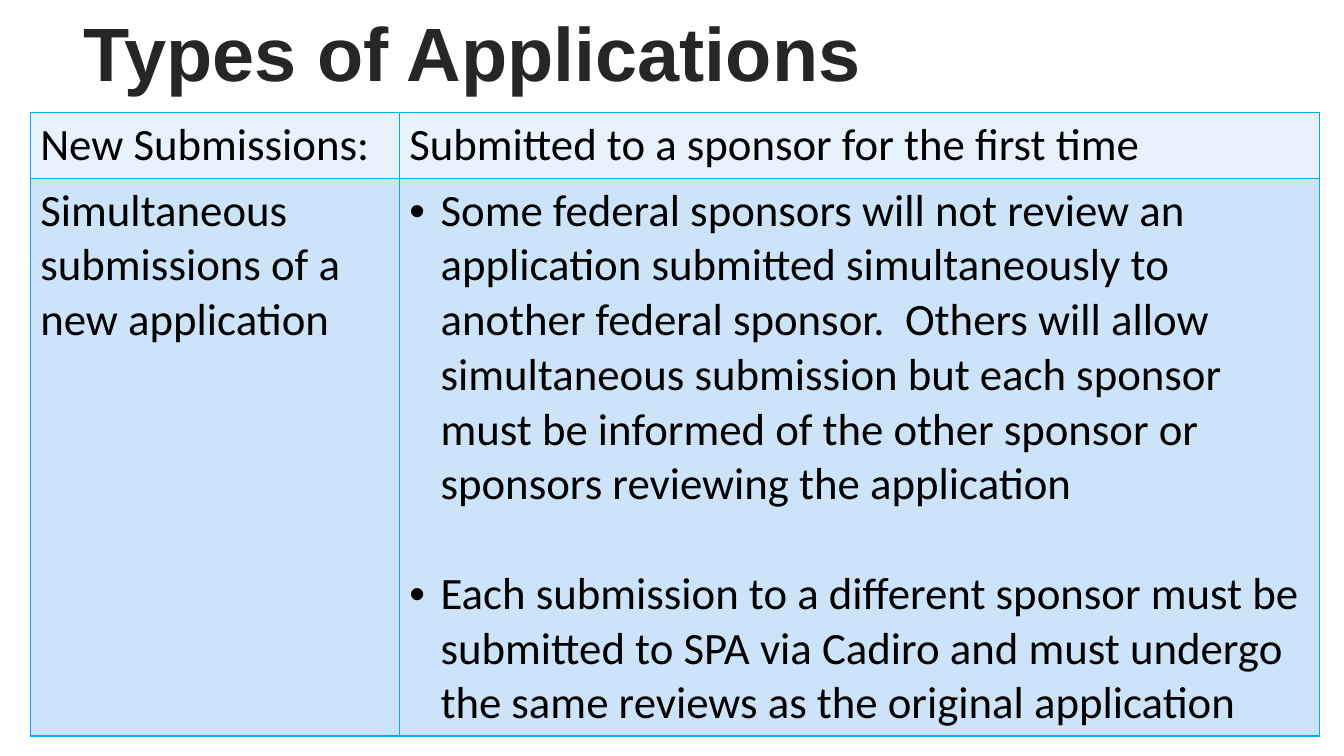
from lxml import etree
from pptx import Presentation
from pptx.dml.color import RGBColor
from pptx.enum.text import MSO_ANCHOR, MSO_AUTO_SIZE, PP_ALIGN
from pptx.oxml.ns import qn
from pptx.util import Inches, Pt

LEFT = PP_ALIGN.LEFT
TOP, MIDDLE = MSO_ANCHOR.TOP, MSO_ANCHOR.MIDDLE
NO_AUTOFIT = MSO_AUTO_SIZE.NONE
TITLE_ONLY = 5
COLORS = {"title": "262626", "body": "000000", "border": "00AEEF",
          "new": "E7F2FC", "simultaneous": "CCE3F9"}
COLUMNS = [3.66, 9.13]
ROWS = [0.65, 5.53]
BODY_SIZE = 32
LINE_HEIGHT = 39
BULLET_INDENT = Inches(0.31)


def write(frame, paragraphs, size=BODY_SIZE, font="Calibri", color="body",
          bold=False, bullets=False, gap=0):
    """Fill a text frame; gap is the space in points between paragraphs."""
    for i, text in enumerate(paragraphs):
        paragraph = frame.paragraphs[0] if i == 0 else frame.add_paragraph()
        paragraph.alignment = LEFT
        paragraph.line_spacing = 1.0
        paragraph.space_before = Pt(gap if i else 0)
        run = paragraph.add_run()
        run.text = text
        run.font.size = Pt(size)
        run.font.name = font
        run.font.bold = bold
        run.font.color.rgb = RGBColor.from_string(COLORS[color])
        if bullets:
            properties = paragraph._p.get_or_add_pPr()
            properties.set("marL", str(BULLET_INDENT))
            properties.set("indent", str(-BULLET_INDENT))
            etree.SubElement(properties, qn("a:buFont"), typeface="Arial")
            etree.SubElement(properties, qn("a:buChar"), char="•")


def add_borders(cell):
    properties = cell._tc.get_or_add_tcPr()
    for side in ("lnL", "lnR", "lnT", "lnB"):
        line = etree.SubElement(properties, qn(f"a:{side}"), w=str(Pt(1)))
        fill = etree.SubElement(line, qn("a:solidFill"))
        etree.SubElement(fill, qn("a:srgbClr"), val=COLORS["border"])


application_types = [
    ("new", "New Submissions:", ["Submitted to a sponsor for the first time"]),
    ("simultaneous", "Simultaneous submissions of a new application", [
        "Some federal sponsors will not review an application submitted "
        "simultaneously to another federal sponsor.  Others will allow "
        "simultaneous submission but each sponsor must be informed of the "
        "other sponsor or sponsors reviewing the application",
        "Each submission to a different sponsor must be submitted to SPA via "
        "Cadiro and must undergo the same reviews as the original application",
    ]),
]

prs = Presentation()
prs.slide_width, prs.slide_height = Inches(13.33), Inches(7.5)
slide = prs.slides.add_slide(prs.slide_layouts[TITLE_ONLY])

title = slide.shapes.title
title.left, title.top = Inches(0.73), Inches(0)
title.width, title.height = Inches(9.54), Inches(1.01)
title.text_frame.auto_size = NO_AUTOFIT
title.text_frame.vertical_anchor = MIDDLE
write(title.text_frame, ["Types of Applications"], size=54, font="Arial",
      color="title", bold=True)

table = slide.shapes.add_table(
    len(ROWS), len(COLUMNS), Inches(0.3), Inches(1.12),
    Inches(sum(COLUMNS)), Inches(sum(ROWS))).table
table.first_row = table.horz_banding = False
for column, width in zip(table.columns, COLUMNS):
    column.width = Inches(width)

for row, height, (shade, kind, rules) in zip(table.rows, ROWS, application_types):
    row.height = Inches(height)
    for cell, paragraphs in zip(row.cells, ([kind], rules)):
        add_borders(cell)
        cell.fill.solid()
        cell.fill.fore_color.rgb = RGBColor.from_string(COLORS[shade])
        cell.vertical_anchor = TOP
        write(cell.text_frame, paragraphs, bullets=len(paragraphs) > 1,
              gap=LINE_HEIGHT)

prs.save("out.pptx")
